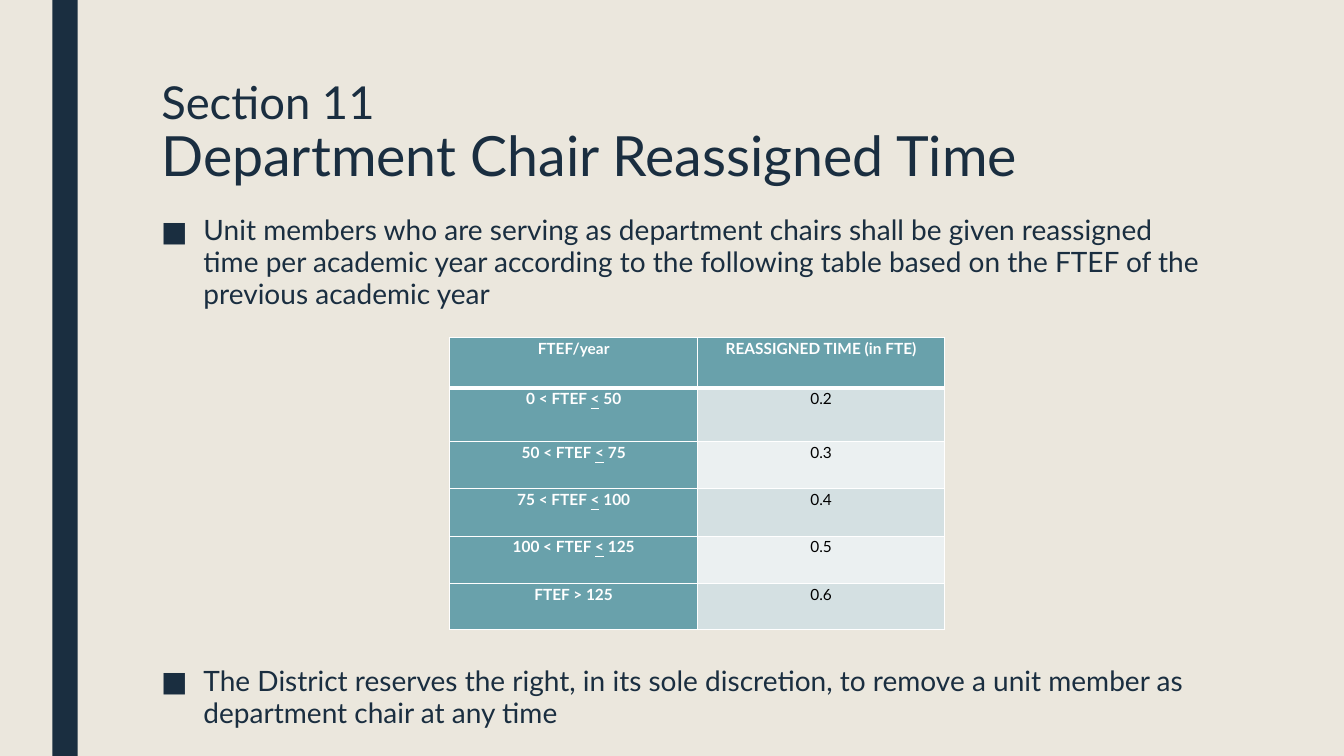
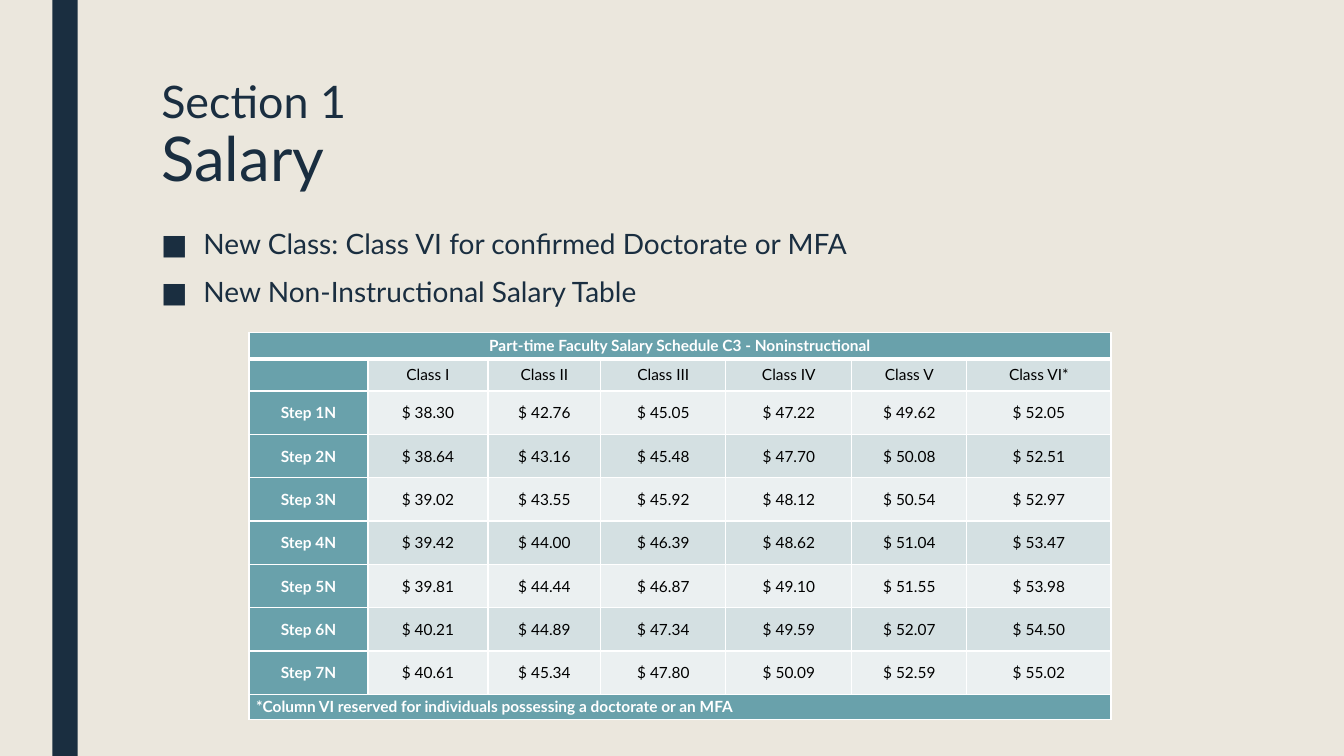
from copy import deepcopy

from lxml import etree
from pptx import Presentation
from pptx import util as u
from pptx.dml.color import RGBColor
from pptx.enum import shapes, text
from pptx.oxml import ns

COLORS = {
    "sand": "EBE7DD",
    "navy": "1A2E40",
    "teal": "69A1AB",
    "mist": "D4E0E2",
    "pale": "EBF0F1",
    "white": "FFFFFF",
    "black": "000000",
}
FONT = "Lato"
UNIT = u.Inches(0.25)
LEFT, WIDTH = 6, 42
CELL_SIZE = 11

STEPS = [
    ("38.30", "42.76", "45.05", "47.22", "49.62", "52.05"),
    ("38.64", "43.16", "45.48", "47.70", "50.08", "52.51"),
    ("39.02", "43.55", "45.92", "48.12", "50.54", "52.97"),
    ("39.42", "44.00", "46.39", "48.62", "51.04", "53.47"),
    ("39.81", "44.44", "46.87", "49.10", "51.55", "53.98"),
    ("40.21", "44.89", "47.34", "49.59", "52.07", "54.50"),
    ("40.61", "45.34", "47.80", "50.09", "52.59", "55.02"),
]


def color(name):
    return RGBColor.from_string(COLORS[name])


def grid(*cells):
    return [round(cell * UNIT) for cell in cells]


def style(span, size, ink="navy", bold=False):
    span.font.name = FONT
    span.font.size = u.Pt(size)
    span.font.bold = bold
    span.font.color.rgb = color(ink)


class Deck:
    def __init__(self):
        self.deck = Presentation()
        self.deck.slide_width, self.deck.slide_height = u.Inches(13.33), u.Inches(7.5)
        fill = self.deck.slide_master.background.fill
        fill.solid()
        fill.fore_color.rgb = color("sand")

    def add_page(self, lines, sizes):
        self.page = self.deck.slides.add_slide(self.deck.slide_layouts[5])
        self.band()
        self.title(lines, sizes)

    def band(self):
        band = self.page.shapes.add_shape(shapes.MSO_SHAPE.RECTANGLE, *grid(2.08, 0, 1, 30))
        band.shadow.inherit = False
        band.fill.solid()
        band.fill.fore_color.rgb = color("navy")
        band.line.fill.background()

    def title(self, lines, sizes):
        title = self.page.shapes.title
        title.left, title.top, title.width, title.height = grid(LEFT, 3, WIDTH, 6.48)
        frame = title.text_frame
        frame.text = "\v".join(lines)
        frame.auto_size = text.MSO_AUTO_SIZE.NONE
        frame.vertical_anchor = text.MSO_ANCHOR.TOP
        para = frame.paragraphs[0]
        para.alignment = text.PP_ALIGN.LEFT
        para.line_spacing = 0.89
        for span, size in zip(para.runs, sizes):
            style(span, size)
        first = para.runs[0]._r.find(ns.qn("a:rPr"))
        para._p.find(ns.qn("a:br")).append(deepcopy(first))

    def bullets(self, top, height, items):
        box = self.page.shapes.add_textbox(*grid(LEFT, top, WIDTH, height))
        frame = box.text_frame
        frame.word_wrap = True
        frame.text = "\n".join(items)
        for para in frame.paragraphs:
            para.line_spacing = 0.94
            para.space_before, para.space_after = u.Pt(10), u.Pt(2)
            style(para.runs[0], 20)
            props = para._p.get_or_add_pPr()
            indent = u.Inches(0.42)
            props.set("marL", str(indent))
            props.set("indent", str(-indent))
            etree.SubElement(props, ns.qn("a:buFont"), typeface=FONT)
            etree.SubElement(props, ns.qn("a:buChar"), char="■")

    def table(self, left, top, columns, heights, rows, anchor, line_spacing=1, space_after=0):
        frame = self.page.shapes.add_table(
            len(rows), len(columns), *grid(left, top, sum(columns), sum(heights)))
        table = frame.table
        for column, width in zip(table.columns, grid(*columns)):
            column.width = width
        for row, height in zip(table.rows, grid(*heights)):
            row.height = height
        for r, values in enumerate(rows):
            spanned = len(values) == 1
            for c in range(len(columns)):
                cell = table.cell(r, c)
                label = r == 0 or c == 0 or spanned
                self.borders(cell, r)
                cell.fill.solid()
                cell.fill.fore_color.rgb = color("teal" if label else ("pale", "mist")[r % 2])
                cell.margin_left = cell.margin_right = u.Inches(0.07)
                cell.margin_top = cell.margin_bottom = 0
                cell.vertical_anchor = anchor
                para = cell.text_frame.paragraphs[0]
                para.line_spacing = line_spacing
                para.space_after = u.Pt(space_after)
                note = spanned and r > 0
                para.alignment = text.PP_ALIGN.LEFT if note else text.PP_ALIGN.CENTER
                self.cell_text(para, values[c] if c < len(values) else "", label)
            if spanned:
                table.cell(r, 0).merge(table.cell(r, len(columns) - 1))

    def cell_text(self, para, value, label):
        for index, part in enumerate(value.split("|") if value else []):
            span = para.add_run()
            span.text = part
            style(span, CELL_SIZE, "white" if label else "black", label)
            span.font.underline = index % 2 == 1
        para._p.get_or_add_endParaRPr().set("sz", str(CELL_SIZE * 100))

    def borders(self, cell, row):
        props = cell._tc.get_or_add_tcPr()
        thick = {(0, "B"), (1, "T")}
        for side in "LRTB":
            width = u.Pt(3 if (row, side) in thick else 1)
            line = etree.SubElement(props, ns.qn(f"a:ln{side}"), w=str(width))
            fill = etree.SubElement(line, ns.qn("a:solidFill"))
            etree.SubElement(fill, ns.qn("a:srgbClr"), val=COLORS["white"])


def main():
    deck = Deck()

    deck.add_page(["Section 11", "Department Chair Reassigned Time"], [32.4, 39.6])
    deck.bullets(8.36, 4.4, [
        "Unit members who are serving as department chairs shall be given reassigned time "
        "per academic year according to the following table based on the FTEF of the "
        "previous academic year"])
    deck.table(17.84, 13.4, [9.84, 9.8], [2, 2.12, 1.88, 1.88, 1.88, 1.84], [
        ("FTEF/year", "REASSIGNED TIME (in FTE)"),
        ("0 < FTEF |<| 50", "0.2"),
        ("50 < FTEF |<| 75", "0.3"),
        ("75 < FTEF |<| 100", "0.4"),
        ("100 < FTEF |<| 125", "0.5"),
        ("FTEF > 125", "0.6"),
    ], text.MSO_ANCHOR.TOP, 1.07, 8)
    deck.bullets(26.24, 3.2, [
        "The District reserves the right, in its sole discretion, to remove a unit member "
        "as department chair at any time"])

    deck.add_page(["Section 1", "Salary"], [32, 44])
    deck.bullets(8.88, 4.2, [
        "New Class: Class VI for confirmed Doctorate or MFA",
        "New Non-Instructional Salary Table"])
    classes = [f"Class {numeral}" for numeral in ("I", "II", "III", "IV", "V", "VI*")]
    steps = [[f"Step {number}N", *(f"$ {rate}" for rate in rates)]
             for number, rates in enumerate(STEPS, 1)]
    deck.table(9.88, 13.2, [4.72, 4.76, 4.48, 4.96, 5, 4.56, 5.72],
               [1.04, 1.28] + [1.72] * len(steps) + [1], [
        ["Part-time Faculty Salary Schedule C3 - Noninstructional"],
        ["", *classes],
        *steps,
        ["*Column VI reserved for individuals possessing a doctorate or an MFA"],
    ], text.MSO_ANCHOR.MIDDLE)

    deck.deck.save("out.pptx")


if __name__ == "__main__":
    main()
